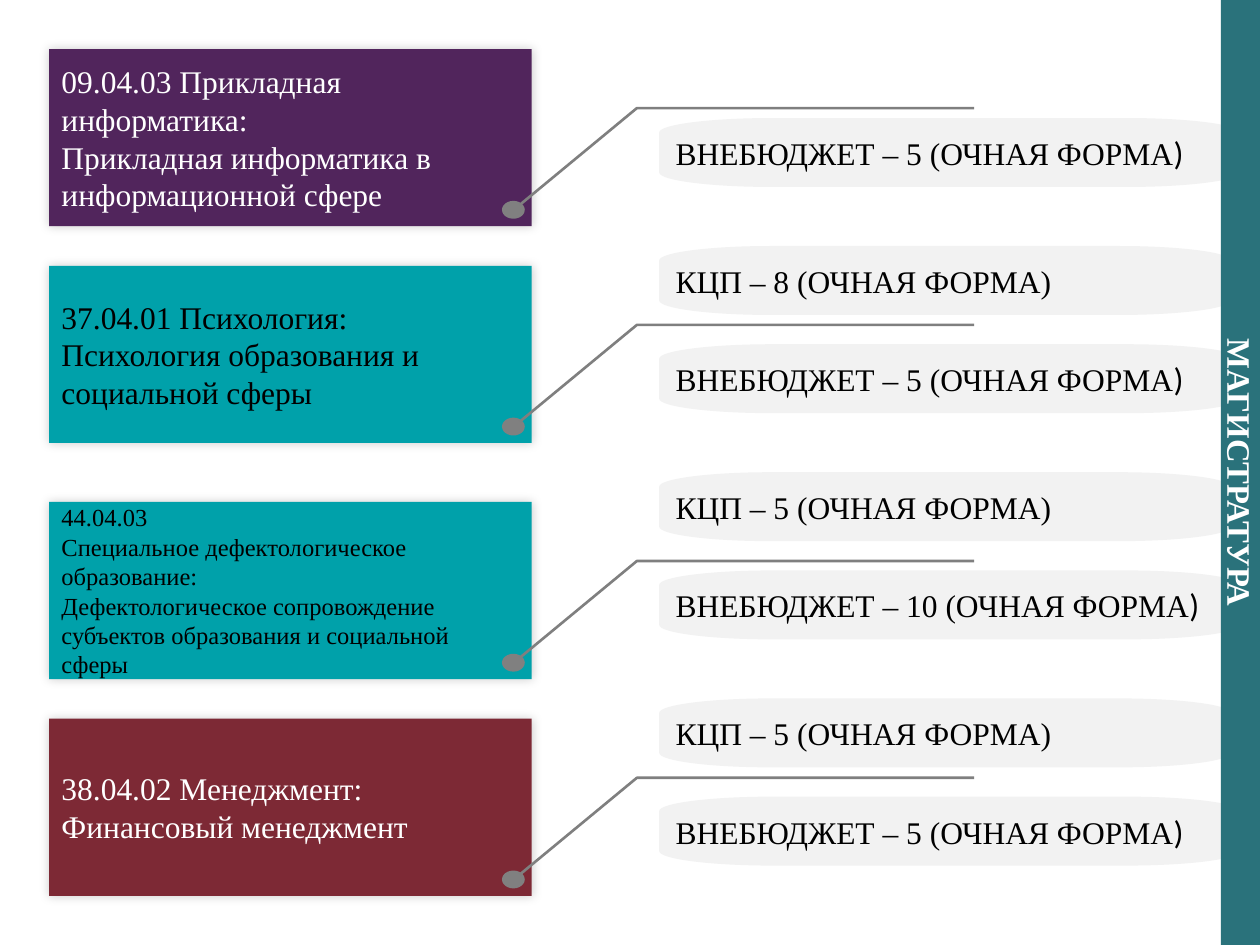
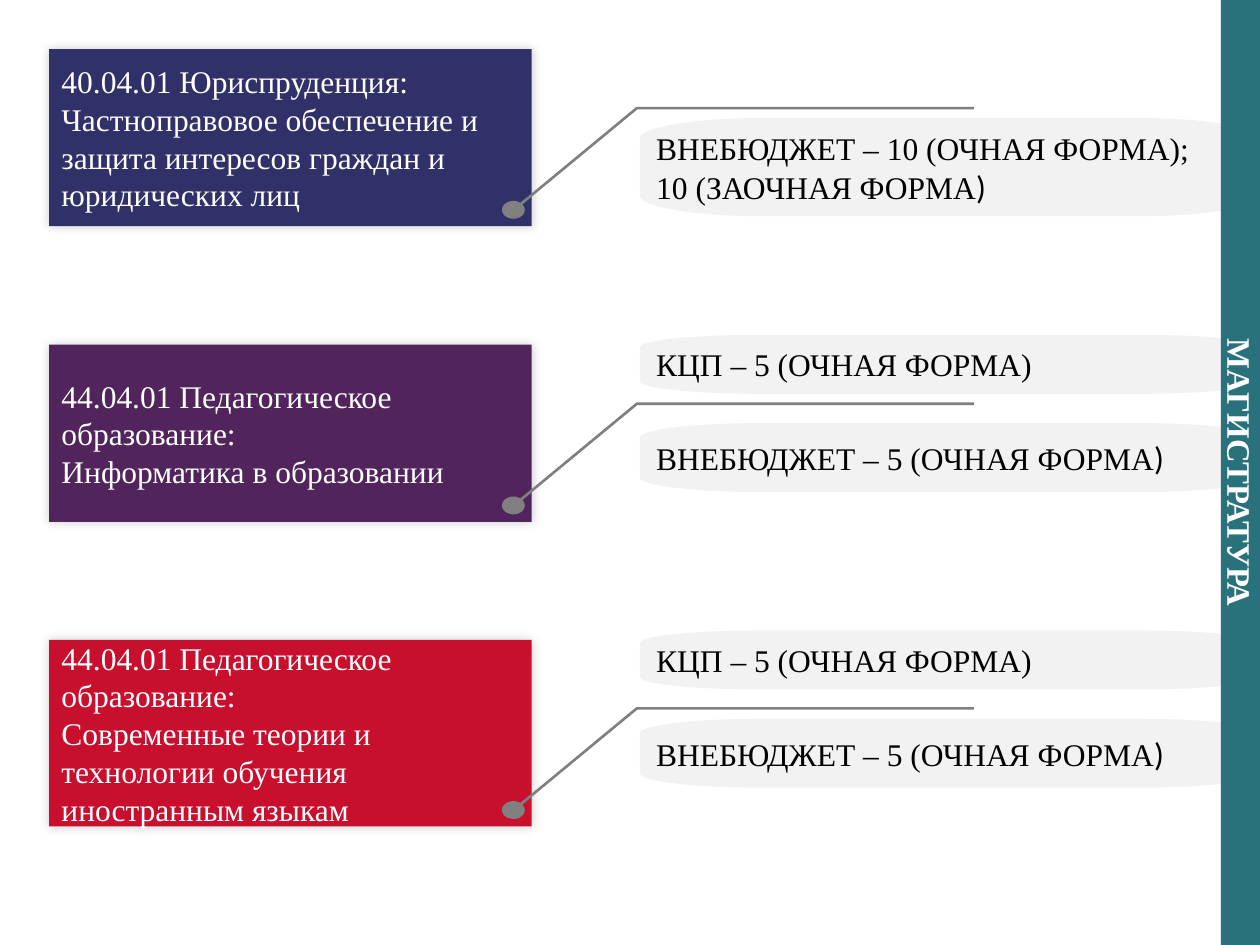
from dataclasses import dataclass

from lxml.etree import SubElement
from pptx import Presentation
from pptx.dml.color import RGBColor
from pptx.enum.shapes import MSO_SHAPE as Preset
from pptx.enum.text import MSO_ANCHOR as Anchor, MSO_AUTO_SIZE as AutoSize, PP_ALIGN as Align
from pptx.oxml.ns import qn
from pptx.util import Cm, Pt


@dataclass(frozen=True)
class Theme:
    white: str = "FFFFFF"
    black: str = "000000"
    violet: str = "51255C"
    turquoise: str = "00A1AA"
    maroon: str = "7D2935"
    navy: str = "303168"
    red: str = "C8102E"
    band: str = "2A727B"
    pill: str = "F2F2F2"
    dot: str = "808080"
    leader: str = "7F7F7F"
    font: str = "Times New Roman"
    bracket_font: str = "Calibri"
    body_size: float = 18
    small_size: float = 14
    band_size: float = 18.7


THEME = Theme()
SLIDE_WIDTH, SLIDE_HEIGHT = 25.4, 19.05
BAND_WIDTH = 0.79
CARD_LEFT, CARD_WIDTH, CARD_HEIGHT = 0.99, 9.73, 3.57
BUDGET, PAID = "КЦП – {} (ОЧНАЯ ФОРМА)", "ВНЕБЮДЖЕТ – {} (ОЧНАЯ ФОРМА)"
INSETS = {f"margin_{side}": Cm(0.33) for side in ("left", "right", "top", "bottom")}


def set_all(target, formats):
    for name, value in formats.items():
        setattr(target, name, value)


def toward(start, end, share):
    """Returns the point that lies the given share of the way from start to end."""
    return tuple(a + (b - a) * share for a, b in zip(start, end))


class SlideBuilder:
    """Draws the elements of the programme slides on the current slide."""

    def __init__(self, presentation, theme):
        self.presentation = presentation
        self.theme = theme
        self.slide = None

    def new_slide(self):
        layout = self.presentation.slide_layouts[6]
        self.slide = self.presentation.slides.add_slide(layout)

    def paint(self, shape, fill):
        shape.shadow.inherit = False
        shape.fill.solid()
        shape.fill.fore_color.rgb = RGBColor.from_string(fill)
        shape.line.fill.background()

    def preset(self, shapes, kind, left, top, width, height, fill):
        shape = shapes.add_shape(kind, Cm(left), Cm(top), Cm(width), Cm(height))
        self.paint(shape, fill)
        return shape

    def run(self, paragraph, text, color, **formats):
        run = paragraph.add_run()
        run.text = text
        set_all(run.font, {"name": self.theme.font} | formats)
        run.font.color.rgb = RGBColor.from_string(color)

    def paragraphs(self, shape, count, align=Align.LEFT, **formats):
        """Formats the text frame and returns its empty paragraphs."""
        frame = shape.text_frame
        set_all(frame, {"word_wrap": True, "auto_size": AutoSize.NONE,
                        "vertical_anchor": Anchor.MIDDLE} | formats)
        for _ in range(count - 1):
            frame.add_paragraph()
        for paragraph in frame.paragraphs:
            paragraph.alignment = align
        return frame.paragraphs

    def side_band(self, text):
        band = self.preset(self.slide.shapes, Preset.RECTANGLE, SLIDE_WIDTH - BAND_WIDTH, 0,
                           BAND_WIDTH, SLIDE_HEIGHT, self.theme.band)
        paragraph, = self.paragraphs(band, 1, Align.CENTER, **INSETS)
        band.element.txBody.bodyPr.set("vert", "vert")
        self.run(paragraph, text, self.theme.white, size=Pt(self.theme.band_size), bold=True)

    def soft_shadow(self, shape):
        effects = shape.element.spPr.find(qn("a:effectLst"))
        shadow = SubElement(effects, qn("a:outerShdw"), blurRad=str(Pt(6)), dist="0",
                            rotWithShape="0")
        color = SubElement(shadow, qn("a:srgbClr"), val=self.theme.black)
        SubElement(color, qn("a:alpha"), val="20000")

    def card(self, top, height, lines, fill, color, size):
        card = self.preset(self.slide.shapes, Preset.RECTANGLE, CARD_LEFT, top,
                           CARD_WIDTH, height, fill)
        self.soft_shadow(card)
        for paragraph, line in zip(self.paragraphs(card, len(lines)), lines):
            self.run(paragraph, line, color, size=Pt(size))

    def leader(self, bottom):
        """Draws a dot and a bent line, placed from the lower edge of a card."""
        group = self.slide.shapes.add_group_shape()
        self.preset(group.shapes, Preset.OVAL, 10.12, bottom - 0.51, 0.46, 0.36, self.theme.dot)
        builder = group.shapes.build_freeform(Cm(10.48), Cm(bottom - 0.43))
        bend = bottom - 2.38
        builder.add_line_segments([(Cm(12.84), Cm(bend)), (Cm(19.64), Cm(bend))], close=False)
        line = builder.convert_to_shape()
        line.shadow.inherit = False
        line.fill.background()
        line.line.width = Pt(1.5)
        line.line.color.rgb = RGBColor.from_string(self.theme.leader)

    def rounded_outline(self, left, top, width, height):
        """Builds a box whose corners are quarter ellipses."""
        right, bottom = left + width, top + height
        radius_x, radius_y = 0.195 * width, 0.21 * height
        corners = [
            ((right - radius_x, bottom), (right, bottom), (right, bottom - radius_y)),
            ((right, top + radius_y), (right, top), (right - radius_x, top)),
            ((left + radius_x, top), (left, top), (left, top + radius_y)),
            ((left, bottom - radius_y), (left, bottom), (left + radius_x, bottom)),
        ]
        points = []
        for enter, corner, leave in corners:
            points += [enter, toward(enter, corner, 0.55), toward(leave, corner, 0.55), leave]
        points = [(Cm(x), Cm(y)) for x, y in points]
        builder = self.slide.shapes.build_freeform(*points[-1])
        builder.add_line_segments(points)
        shape = builder.convert_to_shape()
        # The last three segments of each corner become one curve
        segments = shape.element.findall(".//" + qn("a:lnTo"))
        for first in range(1, 4 * len(corners), 4):
            curve, *others = segments[first:first + 3]
            for segment in others:
                curve.append(segment[0])
                segment.getparent().remove(segment)
            curve.tag = qn("a:cubicBezTo")
        return shape

    def pill(self, left, top, width, height, lines, odd_bracket=False):
        """Draws a text box with round corners; odd_bracket sets the last sign apart."""
        pill = self.rounded_outline(left, top, width, height)
        self.paint(pill, self.theme.pill)
        paragraphs = self.paragraphs(pill, len(lines), **INSETS)
        for paragraph, line in zip(paragraphs, lines):
            split = odd_bracket and line is lines[-1]
            self.run(paragraph, line[:-1] if split else line, self.theme.black,
                     size=Pt(self.theme.body_size))
        if odd_bracket:
            self.run(paragraphs[-1], lines[-1][-1], self.theme.black,
                     size=Pt(self.theme.band_size), name=self.theme.bracket_font)


@dataclass
class Programme:
    top: float
    lines: list
    fill: str
    paid_top: float
    paid: list
    budget: int = 0
    height: float = CARD_HEIGHT
    paid_height: float = 1.39
    color: str = THEME.white
    size: float = THEME.body_size


@dataclass
class PillStyle:
    left: float
    paid_width: float
    budget_width: float
    budget_height: float
    budget_rise: float


FIRST_TOP, FIRST_PAID, PAID_STEP = 0.99, 2.38, 4.56
PEDAGOGY = "44.04.01 Педагогическое образование:"

FIRST_SLIDE = [
    Programme(FIRST_TOP, ["09.04.03 Прикладная информатика:",
                          "Прикладная информатика в информационной сфере"],
              THEME.violet, FIRST_PAID, [PAID.format(5)]),
    Programme(5.36, ["37.04.01 Психология:", "Психология образования и социальной сферы"],
              THEME.turquoise, FIRST_PAID + PAID_STEP, [PAID.format(5)], 8, color=THEME.black),
    Programme(10.12, ["44.04.03", "Специальное дефектологическое образование:",
                      "Дефектологическое сопровождение субъектов образования и социальной сферы"],
              THEME.turquoise, FIRST_PAID + 2 * PAID_STEP, [PAID.format(10)], 5,
              color=THEME.black, size=THEME.small_size),
    Programme(14.49, ["38.04.02 Менеджмент:", "Финансовый менеджмент"],
              THEME.maroon, FIRST_PAID + 3 * PAID_STEP, [PAID.format(5)], 5),
]

SECOND_SLIDE = [
    Programme(FIRST_TOP, ["40.04.01 Юриспруденция:",
                          "Частноправовое обеспечение и защита интересов граждан "
                          "и юридических лиц"],
              THEME.navy, FIRST_PAID, [PAID.format(10) + ";", "10 (ЗАОЧНАЯ ФОРМА)"],
              paid_height=1.98),
    Programme(6.95, [PEDAGOGY, "Информатика в образовании"],
              THEME.violet, 8.53, [PAID.format(5)], 5),
    Programme(12.9, [PEDAGOGY, "Современные теории и технологии обучения иностранным языкам"],
              THEME.red, 14.49, [PAID.format(5)], 5, height=3.76),
]

SLIDES = [
    (FIRST_SLIDE, PillStyle(13.29, 11.7, 11.52, 1.39, 1.98)),
    (SECOND_SLIDE, PillStyle(12.9, 12.5, 12.5, 1.19, 1.78)),
]


def main():
    presentation = Presentation()
    set_all(presentation, {"slide_width": Cm(SLIDE_WIDTH), "slide_height": Cm(SLIDE_HEIGHT)})
    builder = SlideBuilder(presentation, THEME)
    for programmes, style in SLIDES:
        builder.new_slide()
        for item in programmes:
            builder.card(item.top, item.height, item.lines, item.fill, item.color, item.size)
            builder.leader(item.top + item.height)
            if item.budget:
                builder.pill(style.left, item.paid_top - style.budget_rise, style.budget_width,
                             style.budget_height, [BUDGET.format(item.budget)])
            builder.pill(style.left, item.paid_top, style.paid_width, item.paid_height,
                         item.paid, odd_bracket=True)
        builder.side_band("МАГИСТРАТУРА")
    presentation.save("out.pptx")


if __name__ == "__main__":
    main()
